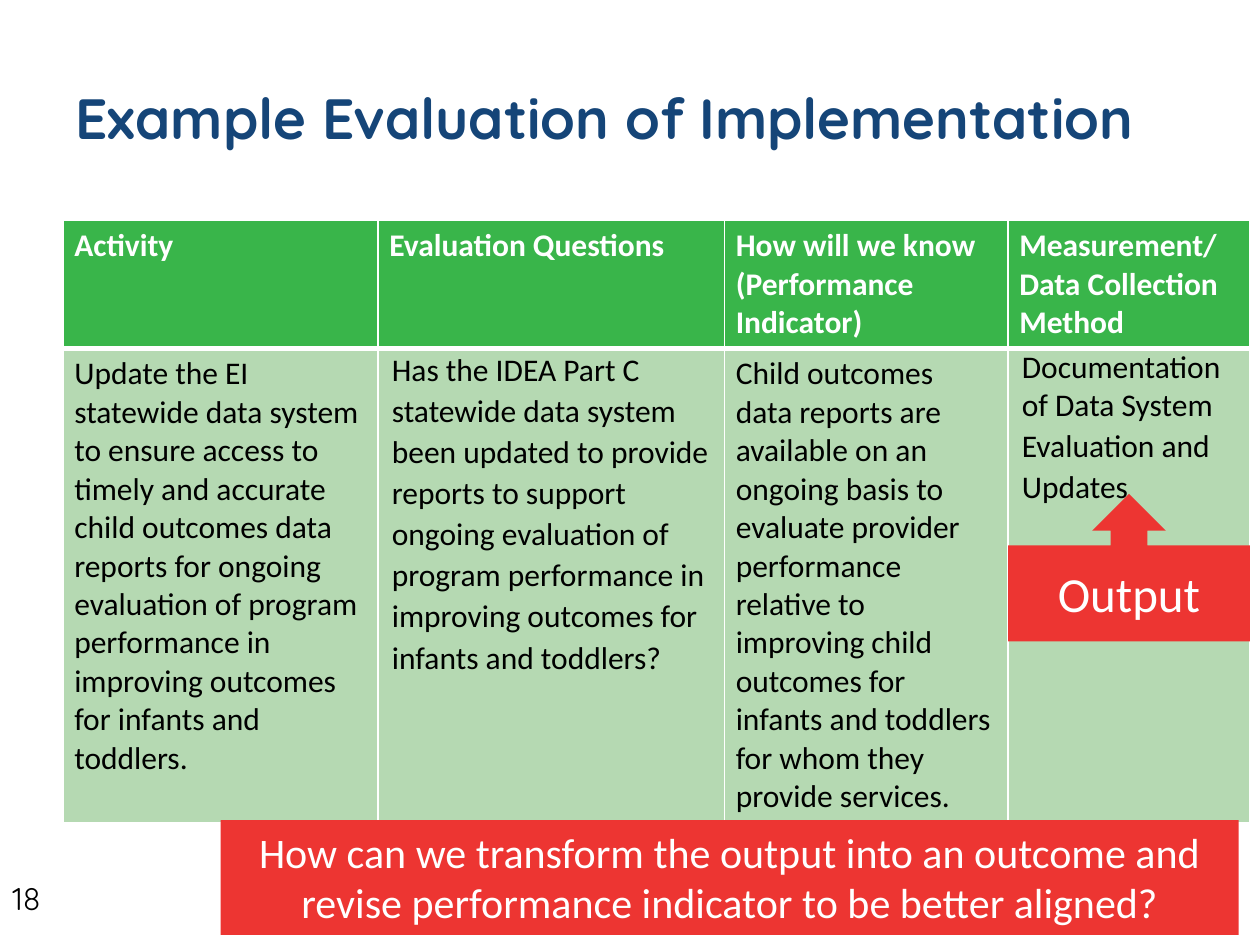
import pptx
import pptx.util
import pptx.dml.color
import pptx.enum.shapes
import pptx.enum.text
import pptx.oxml
import pptx.oxml.ns

Inches = pptx.util.Inches
Pt = pptx.util.Pt
ALIGN = pptx.enum.text.PP_ALIGN
ANCHOR = pptx.enum.text.MSO_ANCHOR
SHAPE = pptx.enum.shapes.MSO_SHAPE

COLORS = {"navy": "154578", "green": "39B54A", "leaf": "6DB467",
          "red": "ED3532", "white": "FFFFFF", "black": "000000"}
HEAD_FONT, BODY_FONT = "Quicksand", "Calibri"

COLUMN_WIDTHS = [2.5, 2.75, 2.25, 1.92]
ROW_HEIGHTS = [0.92, 0.83]
HEADERS = [
    ["Activity"],
    ["Evaluation Questions"],
    ["How will we know", "(Performance Indicator)"],
    ["Measurement/", "Data Collection Method"],
]
ANSWERS = [
    ["Update the EI statewide data system to ensure access to timely and accurate "
     "child outcomes data reports for ongoing evaluation of program performance in "
     "improving outcomes for infants and toddlers."],
    ["Has the IDEA Part C statewide data system been updated to provide reports to "
     "support ongoing evaluation of program performance in improving outcomes for "
     "infants and toddlers?"],
    ["Child outcomes data reports are available on an ongoing basis to evaluate "
     "provider performance relative to improving child outcomes for infants and "
     "toddlers for whom they provide services."],
    ["Documentation of Data System", "Evaluation and Updates"],
]
# Line spacing and space after for each paragraph, by body column
SPACING = {1: [(1.07, 8)], 3: [(0.99, 0.1), (1.07, 8)]}


class SlideBuilder:
    def __init__(self, prs):
        self.s = prs.slides.add_slide(prs.slide_layouts[5])

    def color(self, name):
        return pptx.dml.color.RGBColor.from_string(COLORS[name])

    def fill(self, target, name):
        target.fill.solid()
        target.fill.fore_color.rgb = self.color(name)

    def add_text(self, tf, lines, size, color, font=BODY_FONT, bold=False, align=ALIGN.LEFT):
        tf.word_wrap = True
        for i, line in enumerate(lines):
            p = tf.paragraphs[0] if i == 0 else tf.add_paragraph()
            p.alignment = align
            r = p.add_run()
            r.text = line
            r.font.name = font
            r.font.size = Pt(size)
            r.font.bold = bold
            r.font.color.rgb = self.color(color)

    def title(self, text, box):
        sp = self.s.shapes.title
        sp.left, sp.top, sp.width, sp.height = map(Inches, box)
        tf = sp.text_frame
        tf.auto_size = pptx.enum.text.MSO_AUTO_SIZE.NONE
        tf.vertical_anchor = ANCHOR.MIDDLE
        self.add_text(tf, [text], 32.4, "navy", HEAD_FONT, True)

    def page_number(self, text, box):
        sp = self.s.shapes.add_textbox(*map(Inches, box))
        self.add_text(sp.text_frame, [text], 18, "black", HEAD_FONT)

    def callout(self, preset, text, size, box, anchor):
        sp = self.s.shapes.add_shape(preset, *map(Inches, box))
        sp.shadow.inherit = False
        self.fill(sp, "red")
        sp.line.fill.background()
        sp.text_frame.vertical_anchor = anchor
        self.add_text(sp.text_frame, [text], size, "white", align=ALIGN.CENTER)

    def borders(self, cell, widths):
        """Draw white cell borders; widths in points for left, right, top, bottom."""
        tcPr = cell._tc.get_or_add_tcPr()
        for i, (side, width) in enumerate(zip("LRTB", widths)):
            tcPr.insert(i, pptx.oxml.parse_xml(
                f'<a:ln{side} {pptx.oxml.ns.nsdecls("a")} w="{Pt(width)}"><a:solidFill>'
                f'<a:srgbClr val="{COLORS["white"]}"/></a:solidFill></a:ln{side}>'))

    def margins(self, cell, side, end):
        cell.margin_left = cell.margin_right = Inches(side)
        cell.margin_top = cell.margin_bottom = Inches(end)

    def header_cell(self, cell, lines):
        self.margins(cell, 0.09, 0.05)
        self.add_text(cell.text_frame, lines, 18, "white", bold=True)
        self.fill(cell, "green")
        self.borders(cell, (1, 1, 1, 3))

    def body_cell(self, cell, lines, spacing):
        self.margins(cell, *((0.11, 0) if spacing else (0.09, 0.05)))
        self.add_text(cell.text_frame, lines, 18, "black")
        for p, (line_spacing, after) in zip(cell.text_frame.paragraphs, spacing):
            p.line_spacing = line_spacing
            p.space_after = Pt(after)
        self.fill(cell, "leaf")
        clr = cell._tc.tcPr.find(".//" + pptx.oxml.ns.qn("a:srgbClr"))
        clr.append(pptx.oxml.parse_xml(
            f'<a:alpha {pptx.oxml.ns.nsdecls("a")} val="50000"/>'))
        self.borders(cell, (1, 1, 3, 1))

    def table(self, box):
        frame = self.s.shapes.add_table(2, len(HEADERS), *map(Inches, box))
        table = frame.table
        for column, width in zip(table.columns, COLUMN_WIDTHS):
            column.width = Inches(width)
        for row, height in zip(table.rows, ROW_HEIGHTS):
            row.height = Inches(height)
        frame.height = Inches(box[3])
        for i, (header, answer) in enumerate(zip(HEADERS, ANSWERS)):
            self.header_cell(table.cell(0, i), header)
            self.body_cell(table.cell(1, i), answer, SPACING.get(i, []))


def main():
    prs = pptx.Presentation()
    prs.slide_width, prs.slide_height = Inches(10), Inches(7.5)
    slide = SlideBuilder(prs)
    slide.title("Example Evaluation of Implementation", (0.5, 0.3, 9, 1.25))
    slide.table((0.5, 1.75, sum(COLUMN_WIDTHS), 4.7))
    slide.page_number("18", (0, 6.93, 0.5, 0.49))
    slide.callout(SHAPE.RECTANGLE,
                  "How can we transform the output into an outcome and revise "
                  "performance indicator to be better aligned?",
                  24, (1.75, 6.51, 8.08, 0.91), ANCHOR.TOP)
    slide.callout(SHAPE.UP_ARROW_CALLOUT, "Output", 28,
                  (8, 3.92, 1.92, 1.17), ANCHOR.MIDDLE)
    prs.save("out.pptx")


if __name__ == "__main__":
    main()
